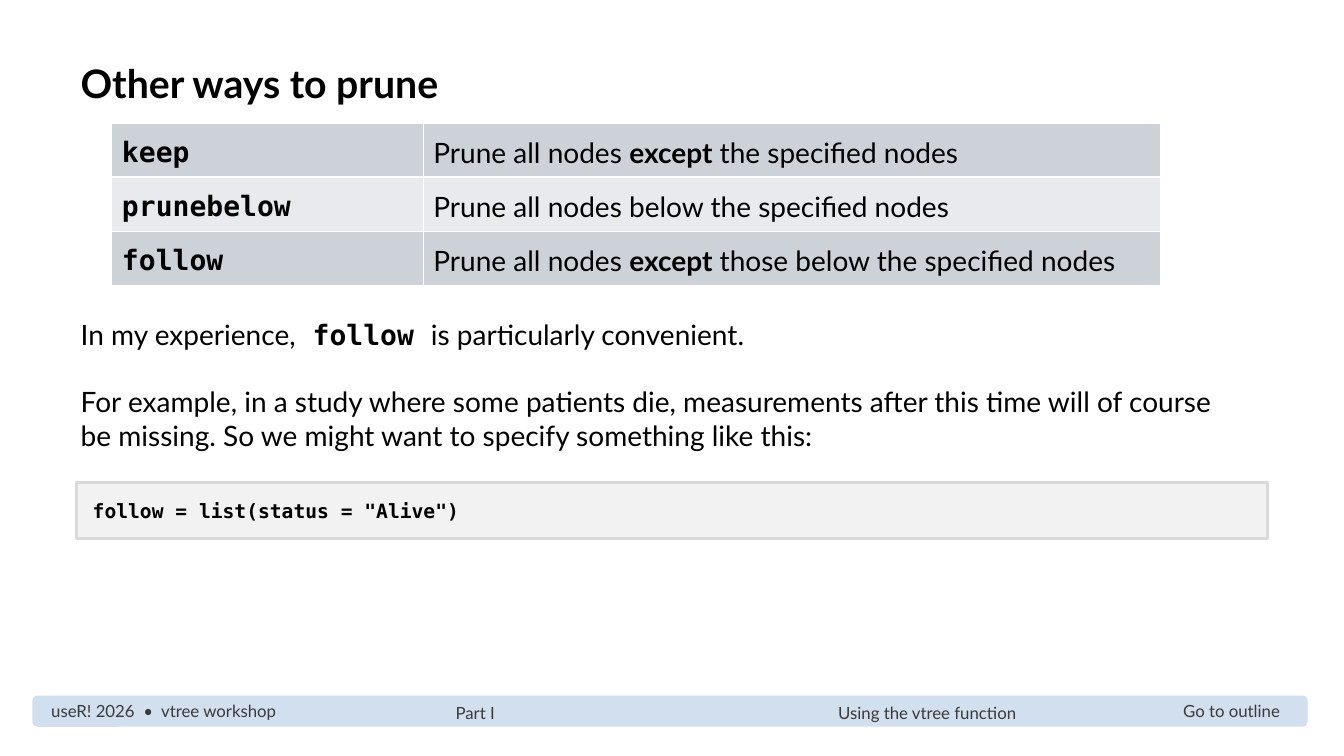
import pptx
import pptx.util
import pptx.dml.color
import pptx.enum.shapes
import pptx.enum.text
import pptx.oxml
import pptx.oxml.ns

Inches, Pt = pptx.util.Inches, pptx.util.Pt
ALIGN = pptx.enum.text.PP_ALIGN
ANCHOR = pptx.enum.text.MSO_ANCHOR
SHAPE = pptx.enum.shapes.MSO_SHAPE

W, H = 13.33, 7.5
MARGIN, TEXT_W = 0.7, 11.62
SANS, MONO = "Lato", "DejaVu Sans Mono"
COLORS = {
    "text": "000000", "footer": "3A3A3A", "bar": "D2DFEE",
    "band_dark": "CCD2D8", "band_light": "E8EAED", "border": "FFFFFF",
    "code_fill": "F2F2F2", "code_line": "D9D9D9",
}
OPTIONS = [
    ("keep", ["Prune all nodes ", ("except", SANS), " the specified nodes"]),
    ("prunebelow", ["Prune all nodes below the specified nodes"]),
    ("follow", ["Prune all nodes ", ("except", SANS),
                " those below the specified nodes"]),
]
REMARKS = [
    ["In my experience,", (" follow ", MONO), "is particularly convenient."],
    ["For example, in a study where some patients die, measurements after "
     "this time will of course be missing. So we might want to specify "
     "something like this:"],
]


def color(name):
    return pptx.dml.color.RGBColor.from_string(COLORS[name])


def add_runs(p, runs, size, tone="text"):
    """Plain strings are regular text; (text, font) pairs are bold."""
    for item in runs:
        text, face = (item, SANS) if isinstance(item, str) else item
        r = p.add_run()
        r.text = text
        r.font.name, r.font.size = face, Pt(size)
        r.font.bold = not isinstance(item, str)
        r.font.color.rgb = color(tone)


def place(sp, x, y, w, h):
    sp.left, sp.top, sp.width, sp.height = map(Inches, (x, y, w, h))


def add_box(s, kind, fill, x, y, w, h):
    sp = s.shapes.add_shape(kind, *map(Inches, (x, y, w, h)))
    sp.shadow.inherit = False
    sp.fill.solid()
    sp.fill.fore_color.rgb = color(fill)
    sp.line.fill.background()
    return sp


def fill_title(s, x, y, w, h):
    sp = s.shapes.title
    place(sp, x, y, w, h)
    tf = sp.text_frame
    tf.vertical_anchor = ANCHOR.MIDDLE
    tf.auto_size = pptx.enum.text.MSO_AUTO_SIZE.NONE
    p = tf.paragraphs[0]
    p.alignment = ALIGN.LEFT
    add_runs(p, [("Other ways to prune", SANS)], 28)


def fill_body(s, x, y, w, h):
    sp = s.placeholders[1]
    place(sp, x, y, w, h)
    tf = sp.text_frame
    tf.auto_size = pptx.enum.text.MSO_AUTO_SIZE.NONE
    for i, runs in enumerate(REMARKS):
        p = tf.add_paragraph() if i else tf.paragraphs[0]
        pPr = p._p.get_or_add_pPr()
        pPr.set("marL", "0")
        pPr.set("indent", "0")
        pptx.oxml.ns.qn("a:buNone")
        pPr.append(pptx.oxml.parse_xml(
            f'<a:buNone {pptx.oxml.ns.nsdecls("a")}/>'))
        p.space_before = Pt(24 * i)
        add_runs(p, runs, 20)


def add_options_table(s, x, y, w, h):
    frame = s.shapes.add_table(len(OPTIONS), 2, *map(Inches, (x, y, w, h)))
    table = frame.table
    table.first_row = False
    for column, share in zip(table.columns, (0.297, 0.703)):
        column.width = Inches(w * share)
    for i, (name, meaning) in enumerate(OPTIONS):
        band = "band_light" if i % 2 else "band_dark"
        for cell, runs in zip(table.rows[i].cells, ([(name, MONO)], meaning)):
            add_borders(cell)
            cell.fill.solid()
            cell.fill.fore_color.rgb = color(band)
            cell.vertical_anchor = ANCHOR.MIDDLE
            p = cell.text_frame.paragraphs[0]
            p.line_spacing = 1.14
            add_runs(p, runs, 20)


def add_borders(cell):
    tcPr = cell._tc.get_or_add_tcPr()
    for side in "LRTB":
        tcPr.append(pptx.oxml.parse_xml(
            f'<a:ln{side} {pptx.oxml.ns.nsdecls("a")} w="12700"><a:solidFill>'
            f'<a:srgbClr val="{COLORS["border"]}"/></a:solidFill></a:ln{side}>'))


def add_code(s, x, y, w, h):
    sp = add_box(s, SHAPE.RECTANGLE, "code_fill", x, y, w, h)
    sp.line.color.rgb = color("code_line")
    sp.line.width = Pt(2)
    tf = sp.text_frame
    tf.margin_left = tf.margin_right = Inches(0.16)
    tf.margin_top = tf.margin_bottom = Inches(0.16)
    tf.vertical_anchor = ANCHOR.TOP
    p = tf.paragraphs[0]
    p.alignment = ALIGN.LEFT
    add_runs(p, [('follow = list(status = "Alive")', MONO)], 14)


def add_footer(s, x, y, w, h):
    add_box(s, SHAPE.ROUNDED_RECTANGLE, "bar", x, y, w, h)
    # Offset from the bar, width, vertical shift, alignment
    labels = [
        ("useR! 2026  •  vtree workshop", 0.09, 2.6, 0, ALIGN.LEFT),
        ("Part I", 4.1, 2.5, 0.02, ALIGN.LEFT),
        ("Using the vtree function", 7.26, 2.6, 0.02, ALIGN.RIGHT),
        ("Go to outline", 11.22, 1.35, 0, ALIGN.CENTER),
    ]
    for text, dx, width, dy, align in labels:
        sp = s.shapes.add_textbox(
            *map(Inches, (x + dx, y + dy, width, h)))
        tf = sp.text_frame
        tf.word_wrap = True
        tf.vertical_anchor = ANCHOR.MIDDLE
        p = tf.paragraphs[0]
        p.alignment = align
        add_runs(p, [text], 12, "footer")


def main():
    prs = pptx.Presentation()
    prs.slide_width, prs.slide_height = Inches(W), Inches(H)
    s = prs.slides.add_slide(prs.slide_layouts[1])
    add_footer(s, 0.32, 0.92 * H, W - 0.68, 0.31)
    fill_title(s, MARGIN, 0.54, TEXT_W, 0.57)
    add_options_table(s, 1.11, 1.22, 10.4, 1.61)
    fill_body(s, MARGIN, 3.1, TEXT_W, 1.45)
    add_code(s, 0.76, 4.79, 11.81, 0.55)
    prs.save("out.pptx")


if __name__ == "__main__":
    main()
